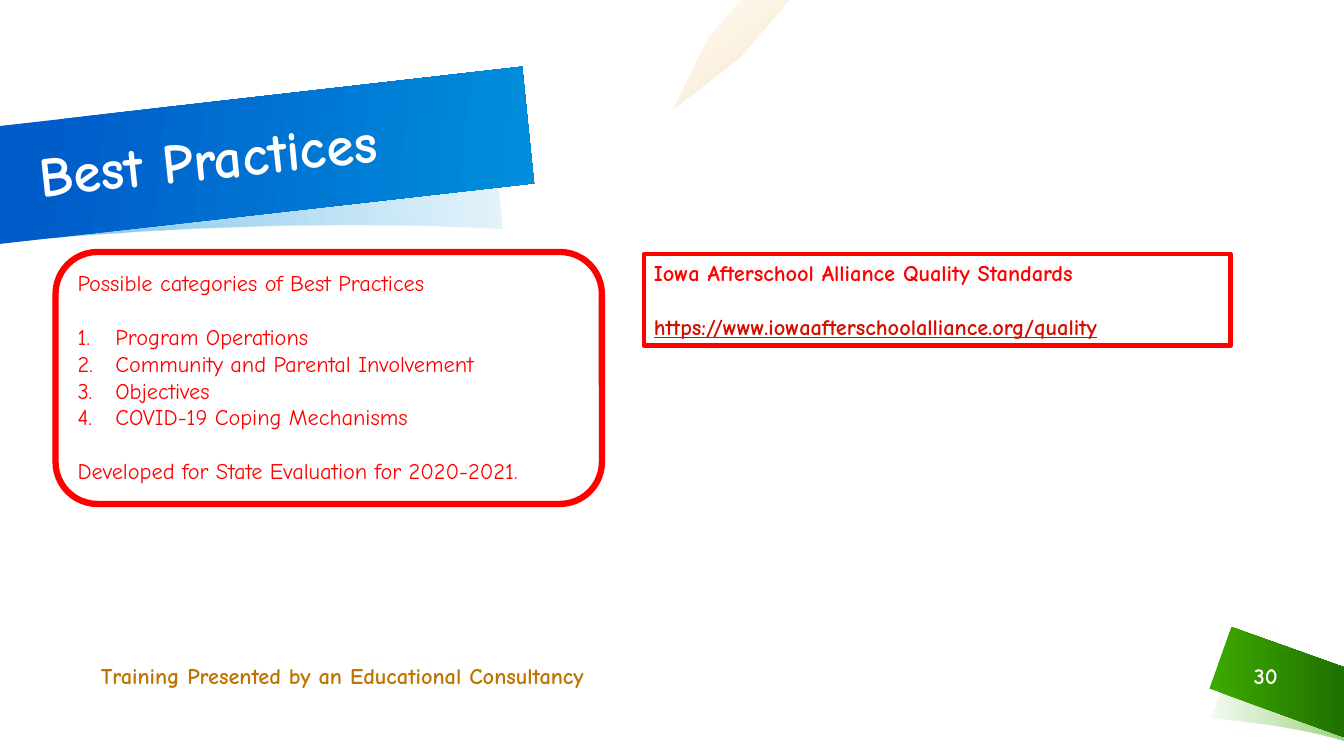
from dataclasses import dataclass
from typing import NamedTuple

from lxml.etree import SubElement
from pptx import Presentation
from pptx.dml.color import RGBColor
from pptx.enum.shapes import MSO_SHAPE
from pptx.enum.text import MSO_ANCHOR, PP_ALIGN
from pptx.oxml.ns import qn
from pptx.util import Cm, Pt


@dataclass(frozen=True)
class Theme:
    font: str = "Comic Neue"
    white: str = "FFFFFF"
    red: str = "FF0000"
    link: str = "D30F00"
    ochre: str = "C07400"
    amber: str = "FFAA00"
    green: str = "3DA800"
    dark_green: str = "1F7100"
    blue: str = "008EDC"
    dark_blue: str = "005CC9"
    title_size: int = 40
    body_size: int = 16
    blank_line: float = 19.2


THEME = Theme()
CURVE_STEPS = 24


class Point(NamedTuple):
    x: float
    y: float


class Stop(NamedTuple):
    position: int
    color: str
    opacity: int = 100


class Frame(NamedTuple):
    left: float
    top: float
    width: float
    height: float


@dataclass(frozen=True)
class Ribbon:
    outline: list[Point]
    stops: list[Stop]
    angle: int = 0


@dataclass(frozen=True)
class Line:
    text: str
    numbered: bool = False
    gap: bool = False
    color: str = THEME.red
    underline: bool | None = None


@dataclass(frozen=True)
class Panel:
    kind: MSO_SHAPE
    frame: Frame
    border: float
    bold: bool
    lines: list[Line]


def points(*pairs: tuple[float, float]) -> list[Point]:
    return [Point(*pair) for pair in pairs]


def curve(*pairs: tuple[float, float]) -> list[Point]:
    """Sample the cubic Bezier curve through four control points."""
    a, b, c, d = points(*pairs)
    result = []
    for step in range(CURVE_STEPS + 1):
        t = step / CURVE_STEPS
        weights = ((1 - t) ** 3, 3 * t * (1 - t) ** 2, 3 * t * t * (1 - t), t ** 3)
        result.append(Point(sum(w * p.x for w, p in zip(weights, (a, b, c, d))),
                            sum(w * p.y for w, p in zip(weights, (a, b, c, d)))))
    return result


RIBBONS = [
    Ribbon(curve((30.53, 18.11), (30.53, 18.11), (32.46, 18.24), (33.86, 18.67))
           + curve((33.86, 16.97), (32.31, 16.54), (31.09, 16.56), (31.09, 16.56)),
           [Stop(3, THEME.green, 6), Stop(100, THEME.green, 50)]),
    Ribbon(points((33.86, 16.81), (31.04, 15.8), (30.48, 17.35), (33.86, 18.57)),
           [Stop(3, THEME.green), Stop(100, THEME.dark_green)]),
    Ribbon(points((12.67, 5.77))
           + curve((12.37, 2.87), (12.37, 2.87), (7.95, 2.39), (-0.05, 3.18))
           + curve((-0.05, 6.12), (7.26, 5.38), (12.67, 5.77), (12.67, 5.77)),
           [Stop(0, THEME.blue, 10), Stop(88, THEME.blue, 50)], 180),
    Ribbon(points((-0.03, 6.15), (13.46, 4.62), (13.16, 1.68), (-0.03, 3.18)),
           [Stop(9, THEME.dark_blue), Stop(100, THEME.blue)], 6),
    Ribbon(points((18.67, 0), (17.83, 0.97), (16.94, 2.77), (18.59, 1.5), (19.89, 0)),
           [Stop(0, THEME.amber, 5), Stop(100, THEME.ochre, 20)], 53),
]

PANELS = [
    Panel(MSO_SHAPE.ROUNDED_RECTANGLE, Frame(1.4, 6.35, 13.77, 6.35), 4.5, False, [
        Line("Possible categories of Best Practices"),
        Line("Program Operations", numbered=True, gap=True),
        Line("Community and Parental Involvement", numbered=True),
        Line("Objectives", numbered=True),
        Line("COVID-19 Coping Mechanisms", numbered=True),
        Line("Developed for State Evaluation for 2020-2021.", gap=True),
    ]),
    Panel(MSO_SHAPE.RECTANGLE, Frame(16.23, 6.4, 14.78, 2.31), 3, True, [
        Line("Iowa Afterschool Alliance Quality Standards"),
        Line("https://www.iowaafterschoolalliance.org/quality",
             gap=True, color=THEME.link, underline=True),
    ]),
]


def draw_ribbon(page, ribbon: Ribbon) -> None:
    start, *rest = [(Cm(p.x), Cm(p.y)) for p in ribbon.outline]
    builder = page.shapes.build_freeform(*start)
    builder.add_line_segments(rest, close=True)
    shape = builder.convert_to_shape()
    shape.shadow.inherit = False
    shape.line.fill.background()
    shape.fill.gradient()
    gradient = shape.element.spPr.find(qn("a:gradFill"))
    stop_list = gradient.find(qn("a:gsLst"))
    for old_stop in list(stop_list):
        stop_list.remove(old_stop)
    for stop in ribbon.stops:
        mark = SubElement(stop_list, qn("a:gs"), pos=str(stop.position * 1000))
        color = SubElement(mark, qn("a:srgbClr"), val=stop.color)
        if stop.opacity < 100:
            SubElement(color, qn("a:alpha"), val=str(stop.opacity * 1000))
    direction = gradient.find(qn("a:lin"))
    direction.set("ang", str(ribbon.angle * 60000))
    direction.set("scaled", "0")


def write(para, text: str, *, color: str, size: float = THEME.body_size,
          bold: bool = True, underline: bool | None = None,
          align: PP_ALIGN = PP_ALIGN.LEFT) -> None:
    para.alignment = align
    span = para.add_run()
    span.text = text
    span.font.name = THEME.font
    span.font.size = Pt(size)
    span.font.bold = bold
    span.font.underline = underline
    span.font.color.rgb = RGBColor.from_string(color)


def number(para) -> None:
    properties = para._p.get_or_add_pPr()
    properties.set("marL", str(Cm(0.95)))
    properties.set("indent", str(-Cm(0.95)))
    SubElement(properties, qn("a:buAutoNum"), type="arabicPeriod")


def draw_panel(page, panel: Panel) -> None:
    box = page.shapes.add_shape(panel.kind, *map(Cm, panel.frame))
    box.shadow.inherit = False
    box.fill.background()
    box.line.color.rgb = RGBColor.from_string(THEME.red)
    box.line.width = Pt(panel.border)
    frame = box.text_frame
    frame.word_wrap = True
    frame.vertical_anchor = MSO_ANCHOR.TOP
    for index, line in enumerate(panel.lines):
        para = frame.add_paragraph() if index else frame.paragraphs[0]
        if line.gap:
            para.space_before = Pt(THEME.blank_line)
        if line.numbered:
            number(para)
        write(para, line.text, color=line.color, bold=panel.bold, underline=line.underline)


def add_label(page, place: Frame, text: str, **style):
    """Add a vertically centred one-line text box and return it."""
    box = page.shapes.add_textbox(*map(Cm, place))
    box.text_frame.word_wrap = True
    box.text_frame.vertical_anchor = MSO_ANCHOR.MIDDLE
    write(box.text_frame.paragraphs[0], text, **style)
    return box


def main() -> None:
    deck = Presentation()
    deck.slide_width, deck.slide_height = Cm(33.87), Cm(19.05)
    page = deck.slides.add_slide(deck.slide_layouts[6])
    for ribbon in RIBBONS:
        draw_ribbon(page, ribbon)
    footer = add_label(page, Frame(2.54, 16.51, 16.51, 1.02),
                       "Training Presented by an Educational Consultancy", color=THEME.ochre)
    footer.text_frame.margin_left = 0
    add_label(page, Frame(31.01, 16.51, 1.78, 1.02), "30",
              color=THEME.white, align=PP_ALIGN.CENTER)
    title = add_label(page, Frame(0.71, 2.41, 12.62, 2.95), "Best Practices",
                      color=THEME.white, size=THEME.title_size)
    title.rotation = -6
    title.text_frame.paragraphs[0].line_spacing = 0.9
    for panel in PANELS:
        draw_panel(page, panel)
    deck.save("out.pptx")


if __name__ == "__main__":
    main()
